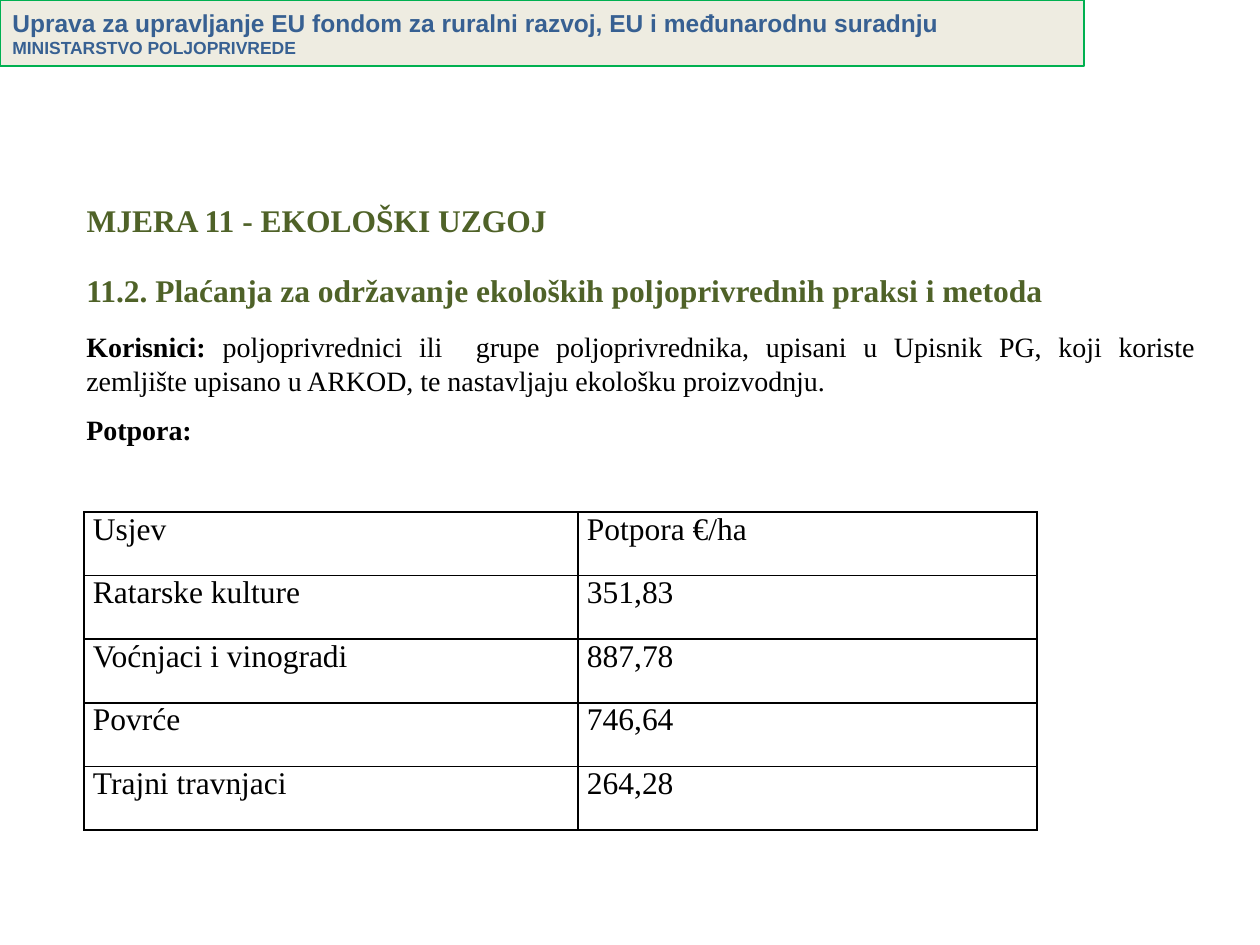
"""Build the slide on support for keeping up organic farming."""
import dataclasses
import typing

import lxml.etree
import pptx
import pptx.dml.color
import pptx.enum.shapes
import pptx.enum.text
import pptx.oxml.ns
import pptx.util

SCALE = 914400 / 126
HUES = {
    "band": "EEECE1",
    "edge": "00B050",
    "blue": "376092",
    "green": "4F6228",
    "black": "000000",
}
SERIF = "Times New Roman"
ALIGN = pptx.enum.text.PP_ALIGN
ANCHOR = pptx.enum.text.MSO_ANCHOR
ROWS = [
    ("Usjev", "Potpora €/ha"),
    ("Ratarske kulture", "351,83"),
    ("Voćnjaci i vinogradi", "887,78"),
    ("Povrće", "746,64"),
    ("Trajni travnjaci", "264,28"),
]
COLS = (494, 459)


@dataclasses.dataclass
class Box:
    left: int
    top: int
    width: int
    height: int

    def emu(self) -> list[int]:
        return [px(side) for side in dataclasses.astuple(self)]


def px(count: int) -> int:
    return round(count * SCALE)


def color(name: str) -> pptx.dml.color.RGBColor:
    return pptx.dml.color.RGBColor.from_string(HUES[name])


def write(para: typing.Any, text: str, *, size: int, hue: str = "black",
          face: str = SERIF, bold: bool = False, align: typing.Any = ALIGN.LEFT,
          before: int = 0, after: int = 0) -> None:
    para.alignment = align
    para.space_before = pptx.util.Pt(before)
    para.space_after = pptx.util.Pt(after)
    run = para.add_run()
    run.text = text
    run.font.size = pptx.util.Pt(size)
    run.font.name = face
    run.font.bold = bold
    run.font.color.rgb = color(hue)


def frame(shape: typing.Any, anchor: typing.Any = ANCHOR.TOP) -> typing.Any:
    body = shape.text_frame
    body.word_wrap = True
    body.auto_size = pptx.enum.text.MSO_AUTO_SIZE.NONE
    body.vertical_anchor = anchor
    return body


def header(slide: typing.Any, box: Box) -> None:
    band = slide.shapes.add_shape(
        pptx.enum.shapes.MSO_SHAPE.RECTANGLE, *box.emu())
    band.shadow.inherit = False
    band.fill.solid()
    band.fill.fore_color.rgb = color("band")
    band.line.color.rgb = color("edge")
    band.line.width = pptx.util.Pt(0.75)
    body = frame(band, ANCHOR.MIDDLE)
    look = {"hue": "blue", "face": "Arial", "bold": True}
    write(body.paragraphs[0],
          "Uprava za upravljanje EU fondom za ruralni razvoj, "
          "EU i međunarodnu suradnju", size=14, **look)
    write(body.add_paragraph(), "MINISTARSTVO POLJOPRIVREDE", size=10, **look)


def title(slide: typing.Any, box: Box) -> None:
    head = slide.shapes.title
    head.left, head.top, head.width, head.height = box.emu()
    write(frame(head).paragraphs[0], "MJERA 11 - EKOLOŠKI UZGOJ",
          size=18, hue="green", bold=True)


def details(slide: typing.Any, box: Box) -> None:
    body = frame(slide.shapes.add_textbox(*box.emu()))
    write(body.paragraphs[0],
          "11.2. Plaćanja za održavanje ekoloških poljoprivrednih praksi i metoda",
          size=18, hue="green", bold=True)
    para = body.add_paragraph()
    look = {"size": 16, "align": ALIGN.JUSTIFY, "before": 12, "after": 6}
    write(para, "Korisnici: ", bold=True, **look)
    write(para, "poljoprivrednici ili  grupe poljoprivrednika, upisani u Upisnik PG, "
          "koji koriste zemljište upisano u ARKOD, te nastavljaju ekološku "
          "proizvodnju.", **look)
    write(body.add_paragraph(), "Potpora:", size=16, bold=True, before=3)


def border(cell: typing.Any) -> None:
    name = pptx.oxml.ns.qn
    props = cell._tc.get_or_add_tcPr()
    for side in ("a:lnL", "a:lnR", "a:lnT", "a:lnB"):
        line = lxml.etree.SubElement(props, name(side), w=str(pptx.util.Pt(1)))
        fill = lxml.etree.SubElement(line, name("a:solidFill"))
        lxml.etree.SubElement(fill, name("a:srgbClr"), val=HUES["black"])


def table(slide: typing.Any, box: Box) -> None:
    grid = slide.shapes.add_table(len(ROWS), len(COLS), *box.emu()).table
    grid.first_row = grid.horz_banding = False
    for col, width in zip(grid.columns, COLS):
        col.width = px(width)
    for row, texts in zip(grid.rows, ROWS):
        for cell, text in zip(row.cells, texts):
            cell.margin_left = cell.margin_right = px(9)
            cell.margin_top = cell.margin_bottom = 0
            border(cell)
            cell.fill.background()
            write(cell.text_frame.paragraphs[0], text, size=18,
                  align=ALIGN.JUSTIFY, after=6)


def main() -> None:
    deck = pptx.Presentation()
    deck.slide_width, deck.slide_height = px(1260), px(945)
    slide = deck.slides.add_slide(deck.slide_layouts.get_by_name("Title Only"))
    header(slide, Box(0, 0, 1084, 66))
    details(slide, Box(74, 265, 1134, 753))
    table(slide, Box(84, 512, sum(COLS), 318))
    title(slide, Box(74, 195, 1052, 50))
    deck.save("out.pptx")


if __name__ == "__main__":
    main()
